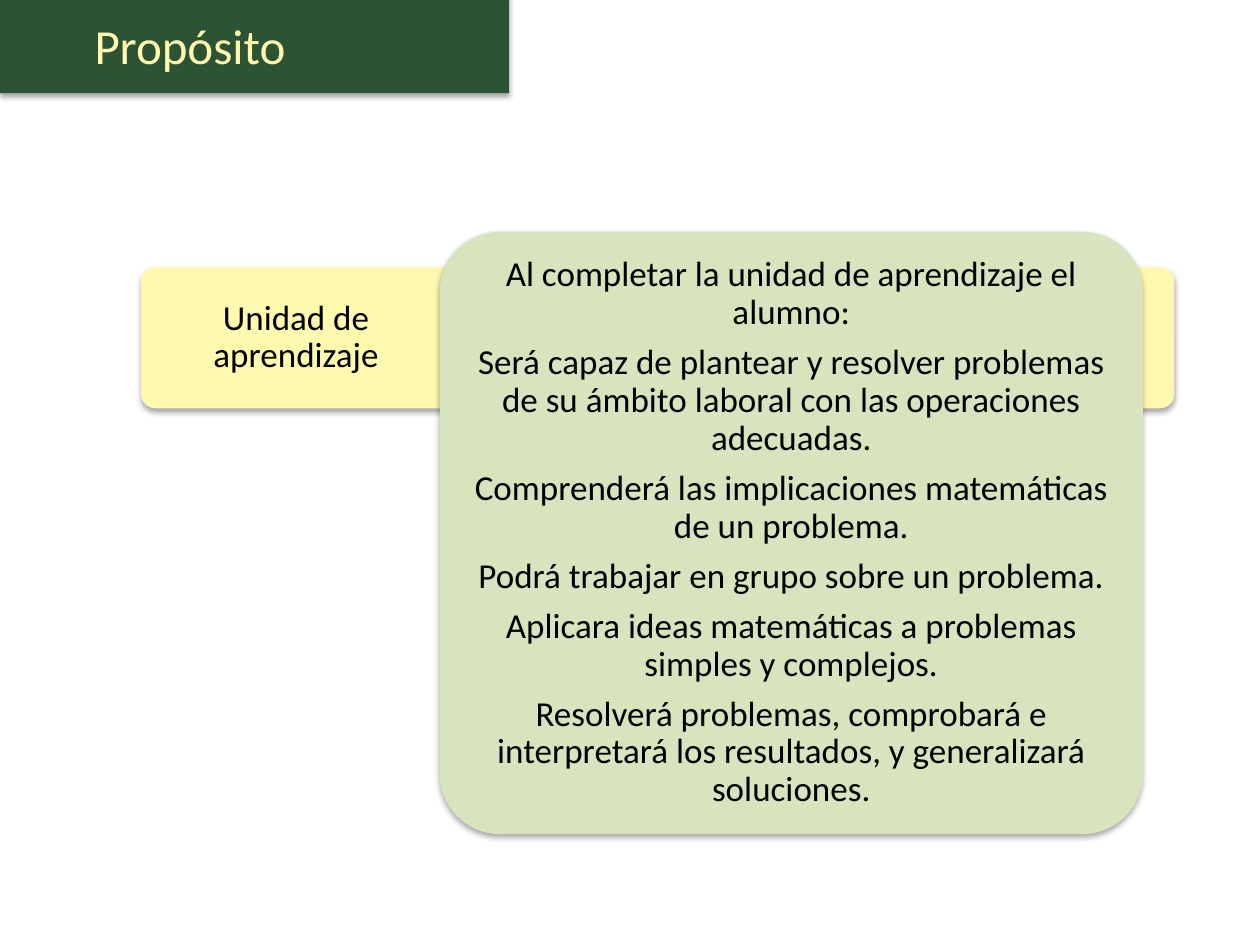
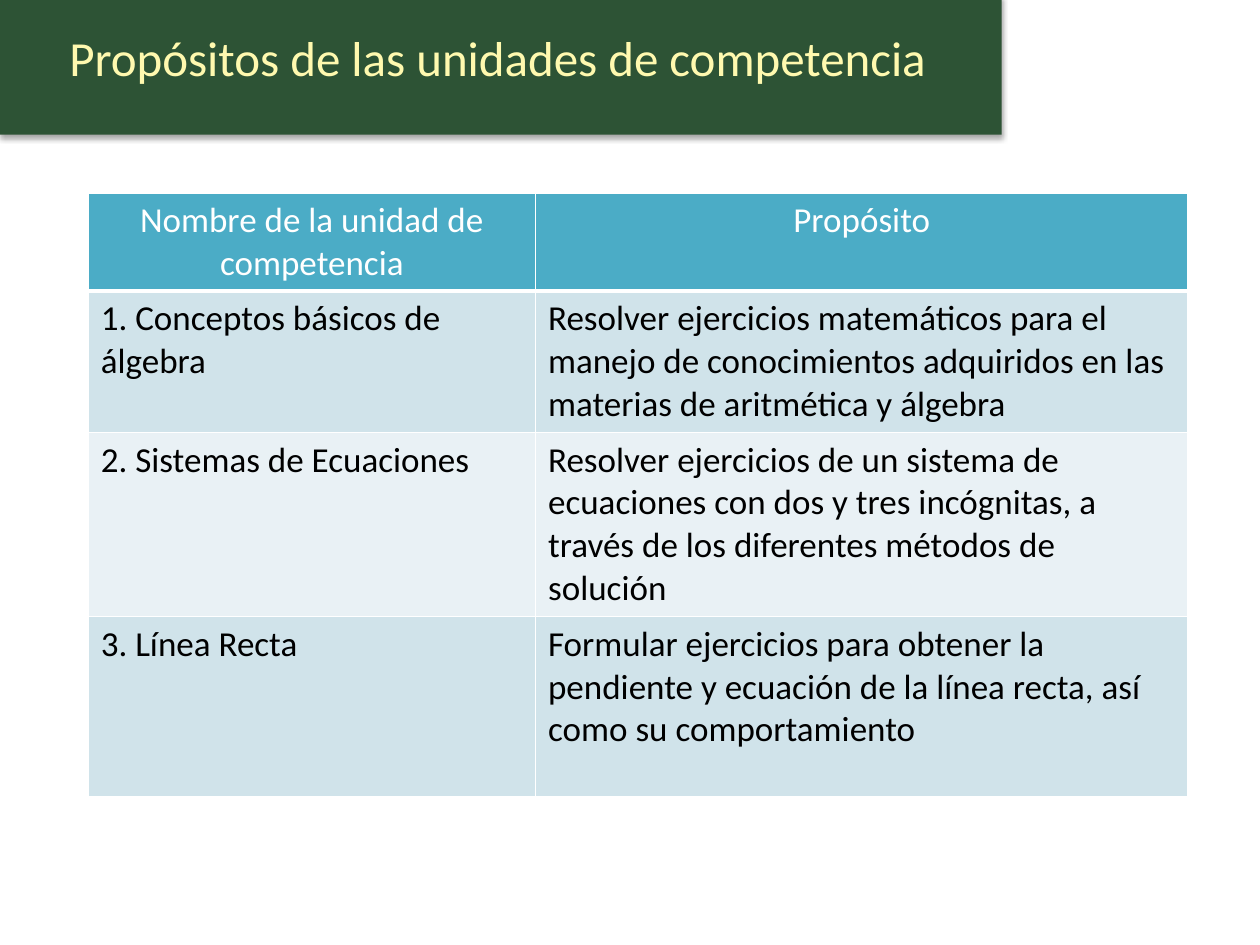
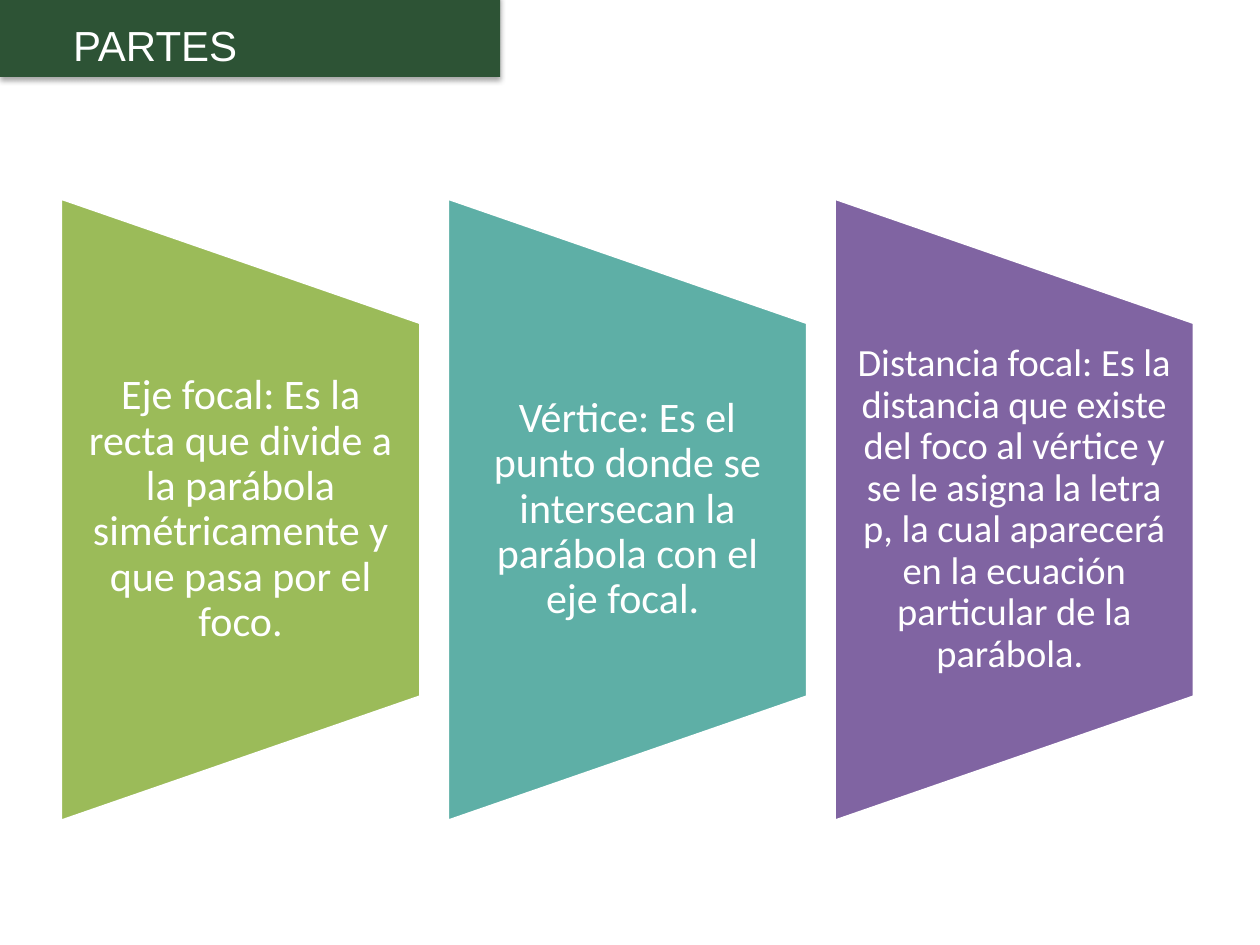
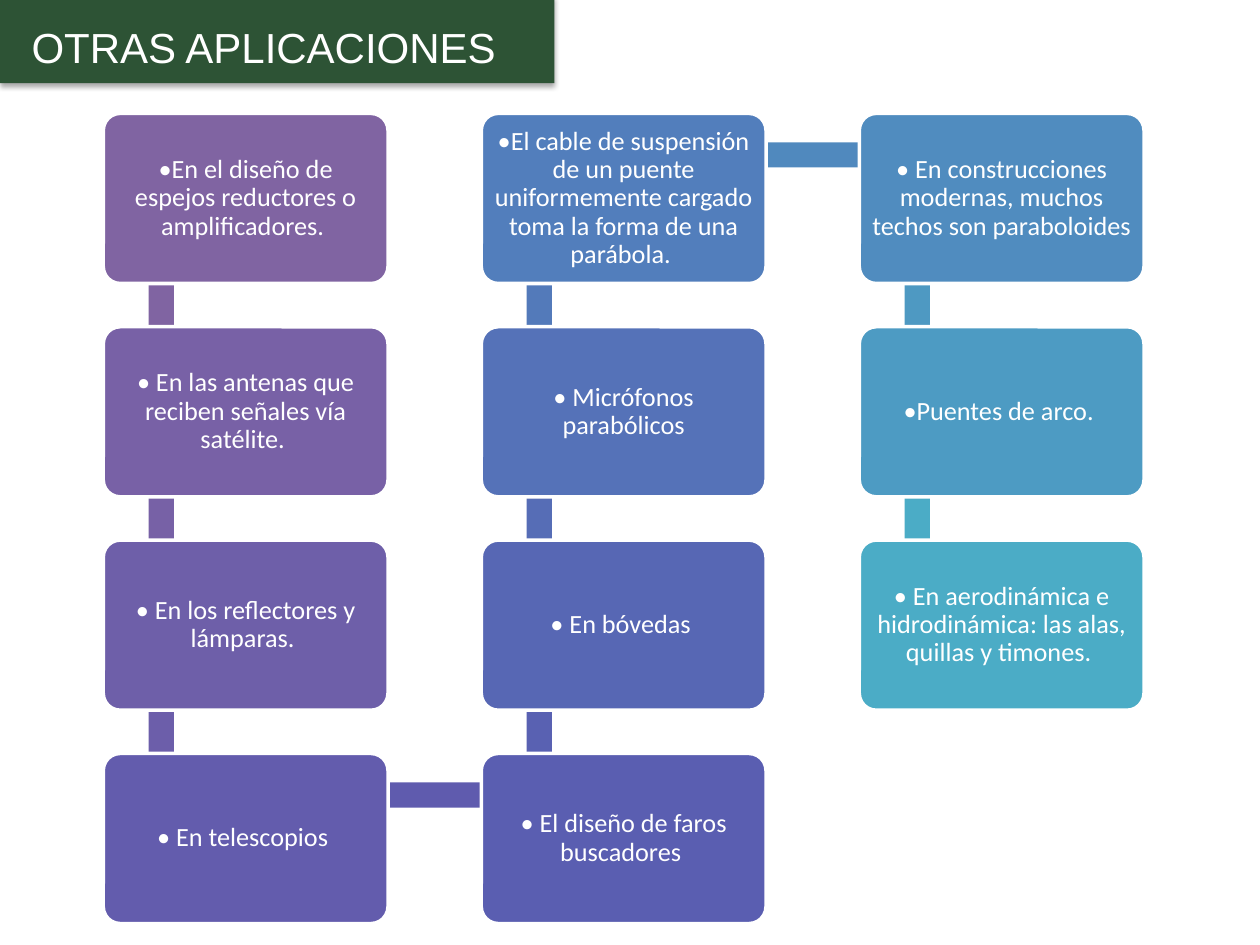
from collections import namedtuple
from dataclasses import dataclass

from lxml.etree import SubElement
from pptx import Presentation
from pptx.dml.color import RGBColor
from pptx.enum.shapes import MSO_SHAPE as Shape
from pptx.enum.text import MSO_ANCHOR as Anchor, MSO_AUTO_SIZE as AutoSize, PP_ALIGN as Align
from pptx.oxml.ns import qn
from pptx.util import Inches, Pt

Box = namedtuple("Box", "left top width height")
Title = namedtuple("Title", "text box band_width band_height font size color anchor")


@dataclass(frozen=True)
class Theme:
    body_font: str = "Calibri"
    caps_font: str = "Arial"
    title_size: int = 28
    caps_size: int = 24
    text_size: int = 20
    card_size: int = 15
    green: str = "2D5335"
    cream: str = "FFF9AF"
    sage: str = "D7E4BD"
    white: str = "FFFFFF"
    black: str = "000000"
    header: str = "4BACC6"
    row_dark: str = "D0E3EA"
    row_light: str = "E9F1F5"


THEME = Theme()

PURPOSES = (
    "Al completar la unidad de aprendizaje el alumno:",
    "Será capaz de plantear y resolver problemas de su ámbito laboral con las operaciones adecuadas.",
    "Comprenderá las implicaciones matemáticas de un problema.",
    "Podrá trabajar en grupo sobre un problema.",
    "Aplicara ideas matemáticas a problemas simples y complejos.",
    "Resolverá problemas, comprobará e interpretará los resultados, y generalizará soluciones.",
)

UNITS = (
    ("Nombre de la unidad de competencia", "Propósito"),
    ("1. Conceptos básicos de álgebra",
     "Resolver ejercicios matemáticos para el manejo de conocimientos adquiridos "
     "en las materias de aritmética y álgebra"),
    ("2. Sistemas de Ecuaciones",
     "Resolver ejercicios de un sistema de ecuaciones con dos y tres incógnitas, "
     "a través de los diferentes métodos de solución"),
    ("3. Línea Recta",
     "Formular ejercicios para obtener la pendiente y ecuación de la línea recta, "
     "así como su comportamiento"),
)

PARTS = (
    ("Eje focal: Es la recta que divide a la parábola simétricamente y que pasa por el foco.",
     "9BBB59", 24, 0.17),
    ("Vértice: Es el punto donde se intersecan la parábola con el eje focal. ",
     "5EAFA6", 24, 0.17),
    ("Distancia focal: Es la distancia que existe del foco al vértice y se le asigna la letra p, "
     "la cual aparecerá en la ecuación particular de la parábola. ",
     "8064A2", 22, 0.15),
)

APPLICATIONS = (
    ("•En el diseño de espejos reductores o amplificadores. ", "8064A2", "8064A2"),
    ("• En las antenas que reciben señales vía satélite. ", "7861A6", "7761A6"),
    ("• En los reflectores y lámparas. ", "6E5FA9", "6C5EAA"),
    ("• En telescopios ", "635CAD", "5F5BAE"),
    ("• El diseño de faros buscadores ", "5A5EB1", "5961B2"),
    ("• En bóvedas ", "5767B4", "566DB6"),
    ("• Micrófonos parabólicos", "5572B8", "537ABA"),
    ("•El cable de suspensión de un puente uniformemente cargado toma la forma de una parábola. ",
     "527EBC", "5089BE"),
    ("• En construcciones modernas, muchos techos son paraboloides ", "508CBF", "4E99C2"),
    ("•Puentes de arco. ", "4D9BC3", "4BACC6"),
    ("• En aerodinámica e hidrodinámica: las alas, quillas y timones. ", "4BACC6", None),
)


def rgb(color):
    return RGBColor.from_string(color)


def inches(box):
    return [Inches(value) for value in box]


def set_font(paragraph, size, color, name=THEME.body_font):
    font = paragraph.font
    font.name, font.size, font.bold = name, Pt(size), False
    font.color.rgb = rgb(color)


def add_shadow(shape):
    effects = shape._element.spPr.find(qn("a:effectLst"))
    shadow = SubElement(effects, qn("a:outerShdw"), blurRad="40000", dist="23000",
                        dir="5400000", rotWithShape="0")
    color = SubElement(shadow, qn("a:srgbClr"), val=THEME.black)
    SubElement(color, qn("a:alpha"), val="35000")


def add_block(slide, kind, box, fill, outline=None, shadow=False):
    shape = slide.shapes.add_shape(kind, *inches(box))
    shape.shadow.inherit = False
    shape.fill.solid()
    shape.fill.fore_color.rgb = rgb(fill)
    if outline:
        shape.line.color.rgb = rgb(outline)
        shape.line.width = Pt(2)
    else:
        shape.line.fill.background()
    if kind == Shape.ROUNDED_RECTANGLE:
        shape.adjustments[0] = 0.1
    if shadow:
        add_shadow(shape)
    return shape


def write_centred(shape, texts, size, color, side, vertical):
    frame = shape.text_frame
    frame.word_wrap = True
    frame.vertical_anchor = Anchor.MIDDLE
    frame.margin_left = frame.margin_right = Inches(side)
    frame.margin_top = frame.margin_bottom = Inches(vertical)
    for index, text in enumerate(texts):
        paragraph = frame.paragraphs[0] if index == 0 else frame.add_paragraph()
        paragraph.text = text
        paragraph.alignment = Align.CENTER
        paragraph.line_spacing = 0.9
        paragraph.space_after = Pt(0.35 * size)
        set_font(paragraph, size, color)


def add_titled_slide(presentation, title):
    slide = presentation.slides.add_slide(presentation.slide_layouts[5])
    band = Box(0, -0.04, title.band_width, title.band_height)
    add_block(slide, Shape.RECTANGLE, band, THEME.green, shadow=True)
    heading = slide.shapes.title
    slide.shapes._spTree.append(heading._element)
    heading.left, heading.top, heading.width, heading.height = inches(title.box)
    frame = heading.text_frame
    frame.text = title.text
    frame.word_wrap = True
    frame.auto_size = AutoSize.NONE
    frame.vertical_anchor = title.anchor
    paragraph = frame.paragraphs[0]
    paragraph.alignment = Align.LEFT
    set_font(paragraph, title.size, title.color, title.font)
    return slide


def sentence_title(text, box, band_width, band_height):
    return Title(text, box, band_width, band_height, THEME.body_font,
                 THEME.title_size, THEME.cream, Anchor.TOP)


def caps_title(text, box, band_width, band_height):
    return Title(text, box, band_width, band_height, THEME.caps_font,
                 THEME.caps_size, THEME.white, Anchor.MIDDLE)


def add_purpose_panel(slide, box):
    strip = Box(box.left, box.top + 0.28, box.width, 1.12)
    add_block(slide, Shape.ROUNDED_RECTANGLE, strip, THEME.cream, shadow=True)
    label = slide.shapes.add_textbox(*inches(strip._replace(width=0.3 * box.width)))
    write_centred(label, ["Unidad de aprendizaje"], THEME.text_size, THEME.black, 0.16, 0.16)
    card_box = Box(box.left + 2.37, box.top, 5.58, box.height)
    card = add_block(slide, Shape.ROUNDED_RECTANGLE, card_box, THEME.sage, shadow=True)
    write_centred(card, PURPOSES, THEME.text_size, THEME.black, 0.08, 0.08)


def add_borders(cell, row):
    widths = {"a:lnL": 1, "a:lnR": 1, "a:lnT": 3 if row == 1 else 1, "a:lnB": 3 if row == 0 else 1}
    properties = cell._tc.get_or_add_tcPr()
    for tag, width in widths.items():
        line = SubElement(properties, qn(tag), w=str(Pt(width)))
        SubElement(SubElement(line, qn("a:solidFill")), qn("a:srgbClr"), val=THEME.white)


def add_units_table(slide, box):
    table = slide.shapes.add_table(len(UNITS), 2, *inches(box)).table
    table.first_row = table.horz_banding = False
    for column, width in zip(table.columns, (3.55, 5.18)):
        column.width = Inches(width)
    for row, height in zip(table.rows, (0.76, 1.1, 1.43, 1.43)):
        row.height = Inches(height)
    for row, texts in enumerate(UNITS):
        is_header = row == 0
        banding = THEME.row_dark if row % 2 else THEME.row_light
        for column, text in enumerate(texts):
            cell = table.cell(row, column)
            add_borders(cell, row)
            cell.fill.solid()
            cell.fill.fore_color.rgb = rgb(THEME.header if is_header else banding)
            cell.text = text
            paragraph = cell.text_frame.paragraphs[0]
            paragraph.alignment = Align.CENTER if is_header else Align.LEFT
            set_font(paragraph, THEME.text_size, THEME.white if is_header else THEME.black)


def add_part(slide, box, text, color, size, inset):
    turned = Box(box.left + (box.width - box.height) / 2,
                 box.top + (box.height - box.width) / 2, box.height, box.width)
    panel = add_block(slide, Shape.FLOWCHART_MANUAL_OPERATION, turned, color, THEME.white)
    panel.rotation = 270
    text_box = Box(box.left, box.top + 0.2 * box.height, box.width, 0.6 * box.height)
    label = slide.shapes.add_textbox(*inches(text_box))
    write_centred(label, [text], size, THEME.white, inset, 0)


def add_parts_row(slide, box):
    width = 2.86
    pitch = (box.width - width) / (len(PARTS) - 1)
    for index, part in enumerate(PARTS):
        add_part(slide, Box(box.left + index * pitch, box.top, width, box.height), *part)


def snake_cell(index, rows):
    column, step = divmod(index, rows)
    return column, rows - 1 - step if column % 2 else step


def link_box(start, end):
    if start.left == end.left:
        return Box(start.left + 0.36, min(start.top, end.top) + 0.34, 0.2, 1.68)
    return Box(start.left + 0.46, start.top + 0.23, 2.99, 0.2)


def add_applications_grid(slide, box):
    rows, columns = 4, 3
    width, height = 2.26, 1.35
    column_pitch = (box.width - width) / (columns - 1)
    row_pitch = (box.height - height) / (rows - 1)
    cells = [snake_cell(index, rows) for index in range(len(APPLICATIONS))]
    cards = [Box(box.left + column * column_pitch, box.top + row * row_pitch, width, height)
             for column, row in cells]
    for start, end, (_, _, link_color) in zip(cards, cards[1:], APPLICATIONS):
        add_block(slide, Shape.RECTANGLE, link_box(start, end), link_color)
    for card_box, (text, color, _) in zip(cards, APPLICATIONS):
        card = add_block(slide, Shape.ROUNDED_RECTANGLE, card_box, color, THEME.white)
        write_centred(card, [text], THEME.card_size, THEME.white, 0.06, 0.06)


def main():
    presentation = Presentation()
    presentation.slide_width, presentation.slide_height = Inches(10), Inches(7.5)
    pages = (
        (sentence_title("Propósito", Box(0.65, 0.07, 3.67, 0.57), 4.04, 0.78),
         add_purpose_panel, Box(1.12, 1.84, 8.2, 4.78)),
        (sentence_title("Propósitos de las unidades de competencia",
                        Box(0.45, 0.17, 7.12, 0.57), 7.95, 1.11),
         add_units_table, Box(0.7, 1.53, 8.73, 4.72)),
        (caps_title("PARTES", Box(0.48, 0.06, 3.18, 0.59), 3.97, 0.65),
         add_parts_row, Box(0.48, 1.57, 9, 4.95)),
        (caps_title("OTRAS APLICACIONES", Box(0.15, 0.12, 5.13, 0.5), 4.4, 0.7),
         add_applications_grid, Box(0.82, 0.9, 8.26, 6.43)),
    )
    for title, add_content, box in pages:
        add_content(add_titled_slide(presentation, title), box)
    presentation.save("out.pptx")


if __name__ == "__main__":
    main()
